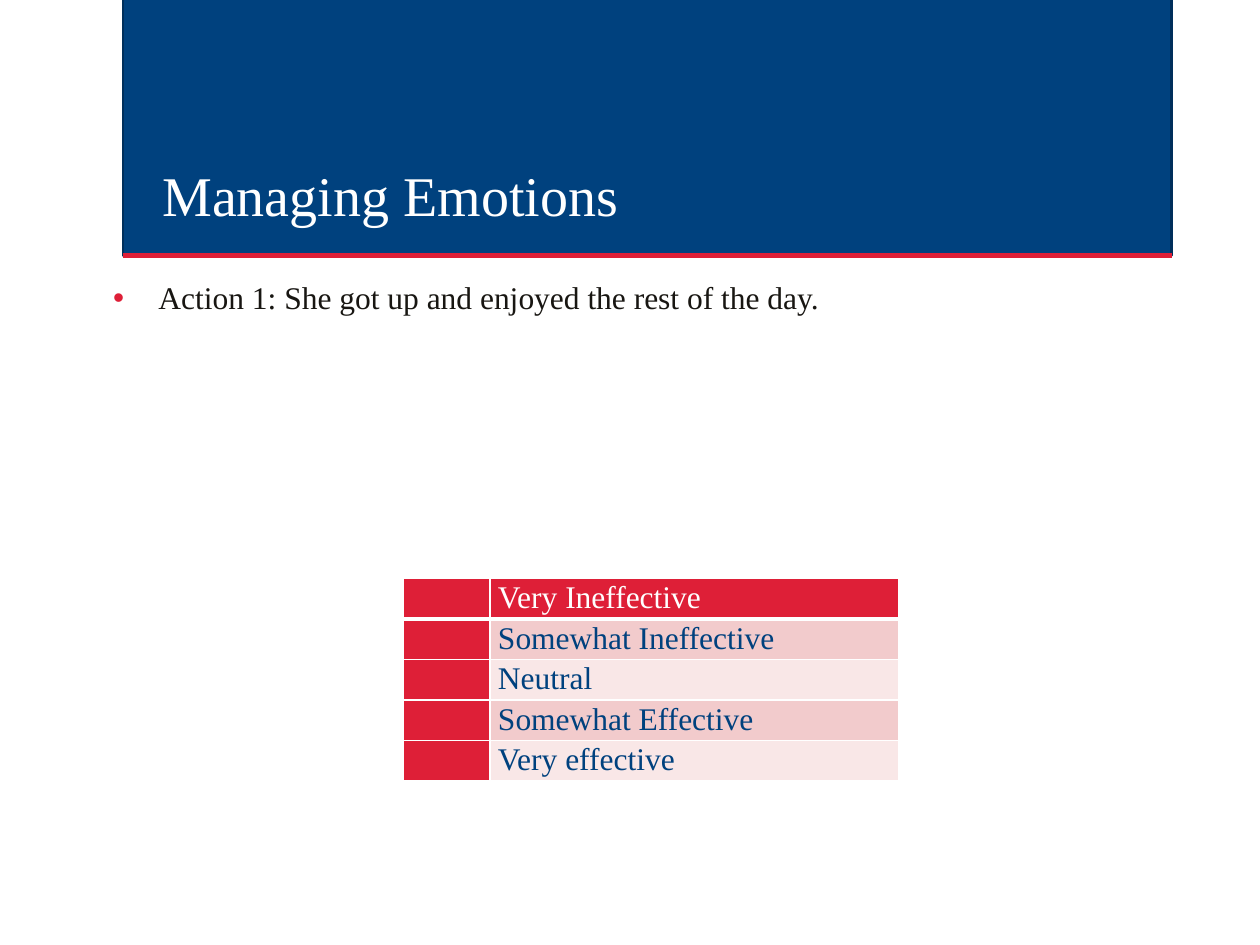
from dataclasses import dataclass

from lxml import etree
from pptx import Presentation
from pptx.dml.color import RGBColor
from pptx.enum import shapes, text
from pptx.oxml import ns
from pptx.util import Pt


@dataclass(frozen=True)
class Theme:
    font: str = "Times New Roman"
    navy: str = "00417E"
    navy_edge: str = "002F5B"
    red: str = "DE1F37"
    pink: str = "F2CBCC"
    pale_pink: str = "F9E7E7"
    ink: str = "181612"
    white: str = "FFFFFF"
    title_size: int = 32
    body_size: int = 18


THEME = Theme()
RATINGS = ["Very Ineffective", "Somewhat Ineffective", "Neutral",
           "Somewhat Effective", "Very effective"]


def rgb(color):
    return RGBColor.from_string(color)


def sub(parent, tag, **attrs):
    return etree.SubElement(parent, ns.qn(tag), **attrs)


def fill(target, color):
    target.fill.solid()
    target.fill.fore_color.rgb = rgb(color)


def write(tf, content, size, color, spacing):
    tf.text = content
    p = tf.paragraphs[0]
    p.line_spacing = spacing
    font = p.runs[0].font
    font.name, font.size = THEME.font, Pt(size)
    font.color.rgb = rgb(color)
    return p


def add_banner(s):
    left, width, bottom = 70.5, 599, 146
    sp = s.shapes.add_shape(shapes.MSO_SHAPE.RECTANGLE,
                            Pt(left), Pt(-1.5), Pt(width), Pt(bottom + 1.5))
    sp.shadow.inherit = False
    fill(sp, THEME.navy)
    sp.line.color.rgb = rgb(THEME.navy_edge)
    sp.line.width = Pt(1.25)

    rule = s.shapes.add_connector(shapes.MSO_CONNECTOR.STRAIGHT, Pt(left),
                                  Pt(bottom), Pt(left + width), Pt(bottom))
    rule.line.color.rgb = rgb(THEME.red)
    rule.line.width = Pt(2.5)
    sub(rule._element.spPr, "a:effectLst")


def add_text(s, box, content, size, color, spacing,
             anchor=text.MSO_ANCHOR.TOP):
    tf = s.shapes.add_textbox(*map(Pt, box)).text_frame
    tf.word_wrap = True
    tf.vertical_anchor = anchor
    return write(tf, content, size, color, spacing)


def add_bullet(p, color):
    p.space_before = Pt(7.5)
    pPr = p._p.get_or_add_pPr()
    pPr.set("marL", str(Pt(36)))
    pPr.set("indent", str(Pt(-26)))
    sub(sub(pPr, "a:buClr"), "a:srgbClr", val=color)
    sub(pPr, "a:buFont", typeface="Arial")
    sub(pPr, "a:buChar", char="•")


def set_borders(cell, color, **widths):
    """Set border widths by side; sides are L, R, T and B."""
    tcPr = cell._tc.get_or_add_tcPr()
    for i, (side, width) in enumerate(widths.items()):
        ln = sub(tcPr, f"a:ln{side}", w=str(Pt(width)))
        sub(sub(ln, "a:solidFill"), "a:srgbClr", val=color)
        tcPr.insert(i, ln)


def add_rating_table(s):
    widths, row_height = (49.7, 233.3), 21.4
    table = s.shapes.add_table(
        len(RATINGS), len(widths), Pt(230.4), Pt(330.5),
        Pt(sum(widths)), Pt(row_height * len(RATINGS))).table
    for column, width in zip(table.columns, widths):
        column.width = Pt(width)
    for i, rating in enumerate(RATINGS):
        table.rows[i].height = Pt(row_height)
        mark, label = table.cell(i, 0), table.cell(i, 1)
        band = THEME.pink if i % 2 else THEME.pale_pink
        fill(mark, THEME.red)
        fill(label, band if i else THEME.red)
        for cell in (mark, label):
            cell.margin_left = cell.margin_right = Pt(4.5)
            cell.margin_top = cell.margin_bottom = 0
            set_borders(cell, THEME.white, L=1, R=1,
                        T=3 if i == 1 else 1, B=1 if i else 3)
        # A small end mark keeps the empty cell from stretching its row.
        sub(mark.text_frame.paragraphs[0]._p, "a:endParaRPr", sz="1200")
        p = write(label.text_frame, rating, THEME.body_size,
                  THEME.navy if i else THEME.white, 1.07)
        p.runs[0].font.bold = False


def main():
    prs = Presentation()
    prs.slide_width, prs.slide_height = Pt(720), Pt(540)
    s = prs.slides.add_slide(prs.slide_layouts[6])
    add_banner(s)
    add_text(s, (85.7, 63.4, 567.4, 70.6), "Managing Emotions",
             THEME.title_size, THEME.white, 0.9, text.MSO_ANCHOR.BOTTOM)
    p = add_text(s, (47.5, 151.2, 623.5, 214.6),
                 "Action 1: She got up and enjoyed the rest of the day.",
                 THEME.body_size, THEME.ink, 1.2)
    add_bullet(p, THEME.red)
    add_rating_table(s)
    prs.save("out.pptx")


if __name__ == "__main__":
    main()
